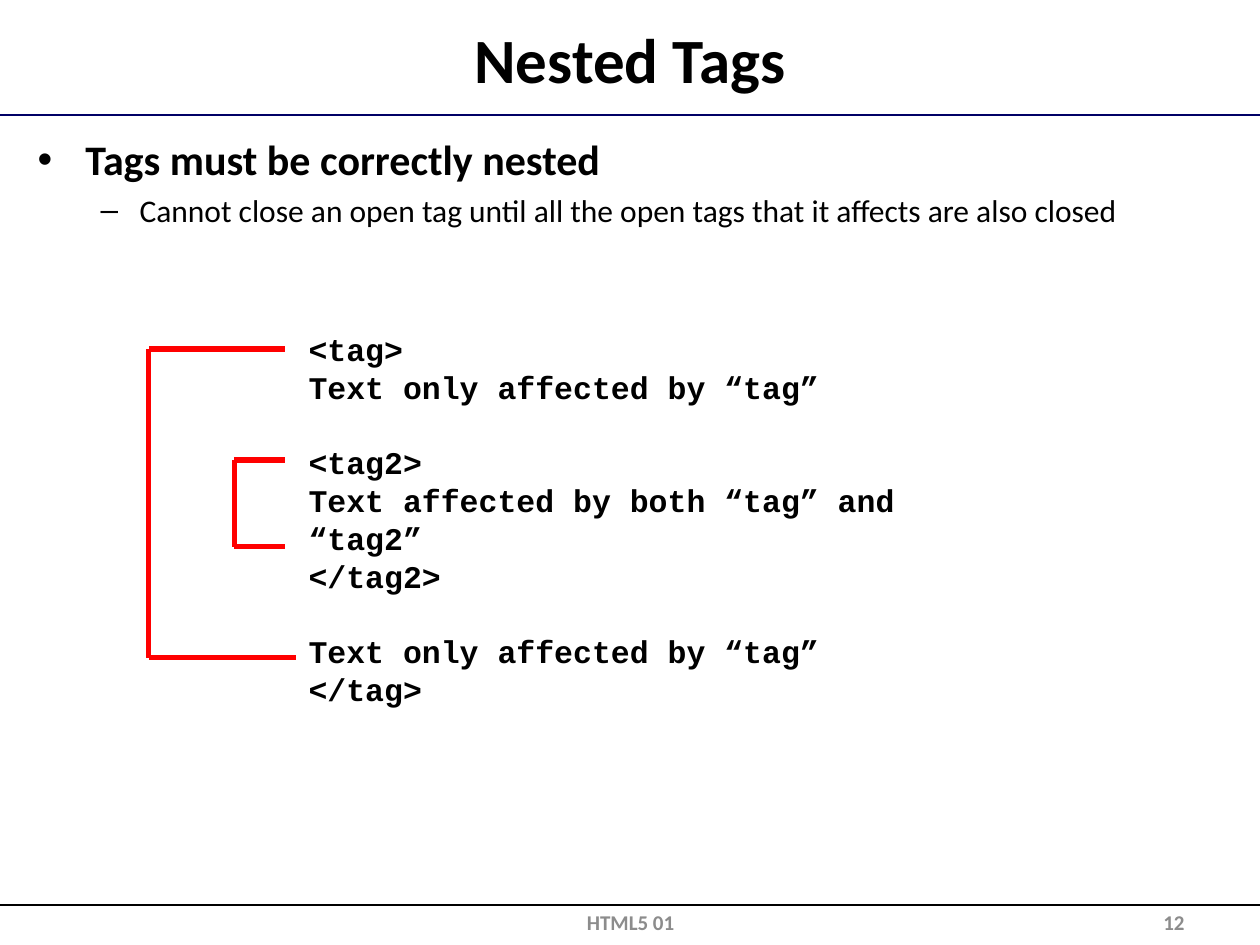
from lxml import etree
from pptx import Presentation
from pptx.dml.color import RGBColor
from pptx.enum.shapes import MSO_CONNECTOR
from pptx.enum.text import MSO_ANCHOR, PP_ALIGN
from pptx.oxml.ns import qn
from pptx.util import Inches, Pt

STRAIGHT = MSO_CONNECTOR.STRAIGHT
MIDDLE, TOP = MSO_ANCHOR.MIDDLE, MSO_ANCHOR.TOP
LEFT, CENTER, RIGHT = PP_ALIGN.LEFT, PP_ALIGN.CENTER, PP_ALIGN.RIGHT

BLACK = RGBColor(0x00, 0x00, 0x00)
NAVY = RGBColor(0x00, 0x00, 0x66)
GREY = RGBColor(0x8C, 0x8C, 0x8C)
RED = RGBColor(0xFF, 0x00, 0x00)

TITLE_FONT = dict(name="Calibri", size=Pt(36), bold=True)
POINT_FONT = dict(name="Calibri", size=Pt(24), bold=True)
DETAIL_FONT = dict(name="Calibri", size=Pt(18), bold=False)
FOOTER_FONT = dict(name="Calibri", size=Pt(12), bold=True)
CODE_FONT = dict(name="Courier New", size=Pt(18), bold=True)

# Text, level, bullet, left margin, hanging indent, font
POINTS = [
    ("Tags must be correctly nested", 0, "•", 0.38, 0.38, POINT_FONT),
    ("Cannot close an open tag until all the open tags that it affects are also closed",
     1, "–", 0.81, 0.31, DETAIL_FONT),
]
CODE_GROUPS = [
    ["<tag>", "Text only affected by “tag”"],
    ["<tag2>", "Text affected by both “tag” and “tag2”", "</tag2>"],
    ["Text only affected by “tag”", "</tag>"],
]
CODE_LINE = Pt(21.6)


def style(para, values, color=BLACK):
    for name, value in values.items():
        setattr(para.font, name, value)
    para.font.color.rgb = color


def add_box(page, area, anchor=TOP):
    box = page.shapes.add_textbox(*map(Inches, area))
    box.text_frame.word_wrap = True
    box.text_frame.vertical_anchor = anchor
    return box.text_frame


def add_line(page, start, end, color, width):
    line = page.shapes.add_connector(STRAIGHT, *map(Inches, start + end))
    line.line.color.rgb = color
    line.line.width = Pt(width)
    etree.SubElement(line._element.spPr, qn("a:effectLst"))


def add_bullet(para, mark, margin, hanging):
    props = para._p.get_or_add_pPr()
    props.set("marL", str(Inches(margin)))
    props.set("indent", str(-Inches(hanging)))
    etree.SubElement(props, qn("a:buFont")).set("typeface", "Arial")
    etree.SubElement(props, qn("a:buChar")).set("char", mark)


def add_title(page, area, text):
    title = page.shapes.title
    title.left, title.top, title.width, title.height = map(Inches, area)
    title.text_frame.text = text
    title.text_frame.vertical_anchor = MIDDLE
    para = title.text_frame.paragraphs[0]
    para.alignment = CENTER
    style(para, TITLE_FONT)


def add_points(page, area):
    frame = add_box(page, area)
    for index, (text, level, mark, margin, hanging, font) in enumerate(POINTS):
        para = frame.add_paragraph() if index else frame.paragraphs[0]
        para.text = text
        para.level = level
        add_bullet(para, mark, margin, hanging)
        if index:
            para.space_before = Pt(4)
        style(para, font)


def add_code(page, area):
    """Set the code lines, with one line of space between groups."""
    frame = add_box(page, area)
    para = frame.paragraphs[0]
    for group_index, group in enumerate(CODE_GROUPS):
        for line_index, text in enumerate(group):
            if group_index or line_index:
                para = frame.add_paragraph()
            para.text = text
            para.alignment = LEFT
            para.line_spacing = CODE_LINE
            if group_index and not line_index:
                para.space_before = CODE_LINE
            style(para, CODE_FONT)


def add_bracket(page, left, top, bottom, top_end, bottom_end):
    """Join an opening tag to its closing tag with a red bracket."""
    corners = [(top_end, top), (left, top), (left, bottom), (bottom_end, bottom)]
    for start, end in zip(corners, corners[1:]):
        add_line(page, start, end, RED, 3)


def add_footer(page, top, height):
    for left, width, text, align in [(3.42, 3.17, "HTML5 01", CENTER),
                                     (7.17, 2.33, "12", RIGHT)]:
        para = add_box(page, (left, top, width, height), MIDDLE).paragraphs[0]
        para.text = text
        para.alignment = align
        style(para, FOOTER_FONT, GREY)


def main():
    deck = Presentation()
    deck.slide_width, deck.slide_height = Inches(10), Inches(7.5)
    page = deck.slides.add_slide(deck.slide_layouts[5])
    for height, color in [(0.91, NAVY), (7.18, BLACK)]:
        add_line(page, (0, height), (10, height), color, 1)
    add_title(page, (0.1, 0.12, 9.8, 0.69), "Nested Tags")
    add_points(page, (0.2, 1.01, 9.6, 5.98))
    add_footer(page, 7.18, 0.27)
    add_code(page, (2.35, 2.57, 5.88, 2.8))
    add_bracket(page, 1.86, 3.65, 4.34, 2.26, 2.26)
    add_bracket(page, 1.18, 2.77, 5.22, 2.26, 2.35)
    deck.save("out.pptx")


if __name__ == "__main__":
    main()
